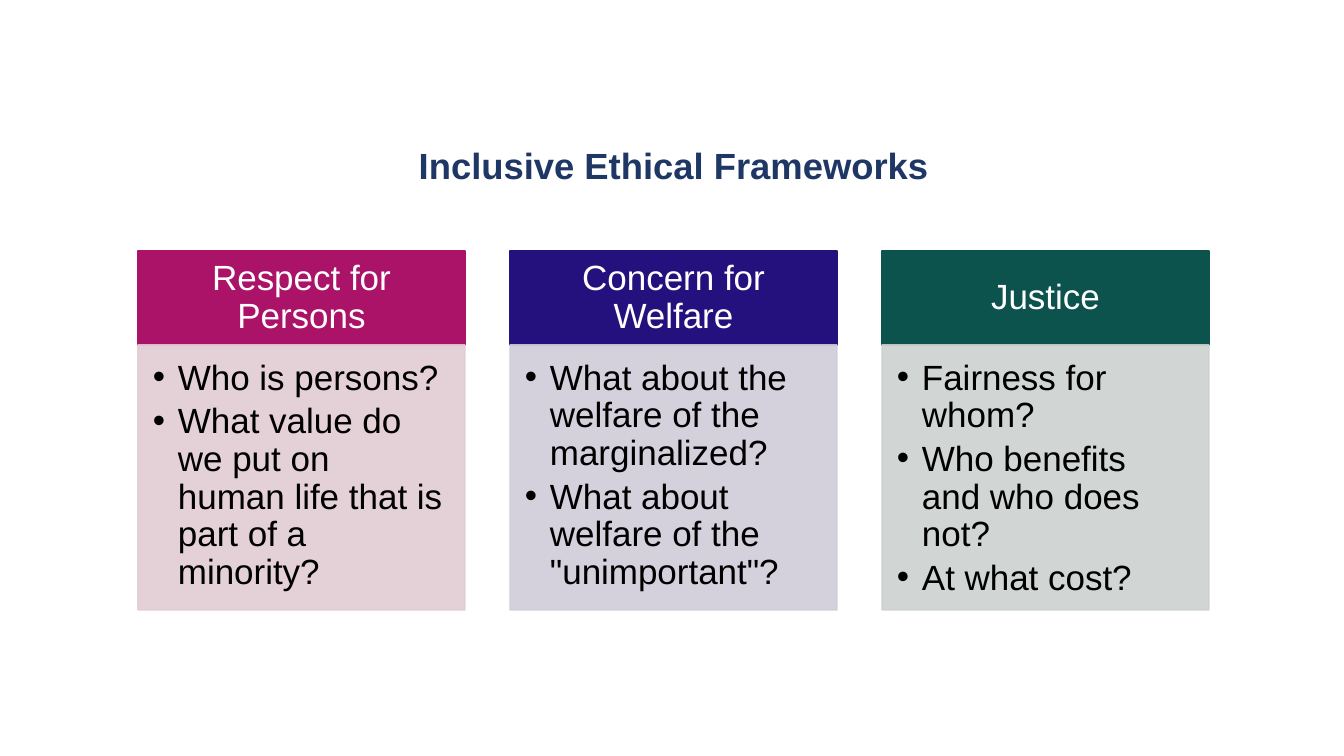
from lxml import etree
from pptx import Presentation
from pptx import util as u
from pptx.dml.color import RGBColor
from pptx.enum import shapes, text
from pptx.oxml.ns import qn

SCALE = 914400 / 100.8
FONT = "Arial"
HUES = {
    "title": "1E3765", "white": "FFFFFF", "black": "000000",
    "rose": "AB1368", "blush": "E2CCD4",
    "indigo": "24117E", "lilac": "D0CCDA",
    "teal": "0D534D", "mist": "CCD1D0",
}
LEFT, STEP, WIDTH = 138, 372, 327
TOP, HEAD, BODY = 251, 94, 265
COLUMNS = [
    ("Respect for Persons", "rose", "blush", [
        "Who is persons?",
        "What value do we put on human life that is part of a minority?"]),
    ("Concern for Welfare", "indigo", "lilac", [
        "What about the welfare of the marginalized?",
        'What about welfare of the "unimportant"?']),
    ("Justice", "teal", "mist", [
        "Fairness for whom?",
        "Who benefits and who does not?",
        "At what cost?"]),
]


def px(n):
    return u.Emu(round(n * SCALE))


def tint(hue):
    return RGBColor.from_string(HUES[hue])


def write(para, words, size, hue, bold=False):
    para.line_spacing = 0.9
    run = para.add_run()
    run.text = words
    font = run.font
    font.name, font.size, font.bold = FONT, u.Pt(size), bold
    font.color.rgb = tint(hue)


def bullet(para):
    props = para._p.get_or_add_pPr()
    props.set("marL", str(px(25)))
    props.set("indent", str(-px(25)))
    etree.SubElement(props, qn("a:buFont")).set("typeface", FONT)
    etree.SubElement(props, qn("a:buChar")).set("char", "•")


def fade(shape, share):
    """Make fill and line opaque to the given percentage."""
    for hue in shape._element.spPr.iter(qn("a:srgbClr")):
        etree.SubElement(hue, qn("a:alpha")).set("val", str(share * 1000))


def box(slide, place, hue, insets, anchor):
    shape = slide.shapes.add_shape(
        shapes.MSO_SHAPE.RECTANGLE, *map(px, place))
    shape.shadow.inherit = False
    shape.fill.solid()
    shape.fill.fore_color.rgb = tint(hue)
    shape.line.color.rgb = tint(hue)
    shape.line.width = u.Pt(1)
    frame = shape.text_frame
    frame.word_wrap = True
    frame.vertical_anchor = anchor
    (frame.margin_left, frame.margin_top,
     frame.margin_right, frame.margin_bottom) = map(px, insets)
    return shape


def header(slide, left, words, hue):
    shape = box(slide, (left, TOP, WIDTH, HEAD), hue,
                (19, 11, 19, 11), text.MSO_ANCHOR.MIDDLE)
    para = shape.text_frame.paragraphs[0]
    para.alignment = text.PP_ALIGN.CENTER
    write(para, words, 25, "white")


def panel(slide, left, items, hue):
    shape = box(slide, (left, TOP + HEAD, WIDTH, BODY), hue,
                (15, 15, 19, 22), text.MSO_ANCHOR.TOP)
    fade(shape, 90)
    frame = shape.text_frame
    for i, item in enumerate(items):
        para = frame.add_paragraph() if i else frame.paragraphs[0]
        bullet(para)
        para.alignment = text.PP_ALIGN.LEFT
        para.space_after = u.Pt(4)
        write(para, item, 25, "black")


def title(slide, words):
    shape = slide.shapes.title
    shape.left, shape.top, shape.width, shape.height = map(
        px, (151, 118, 1046, 99))
    frame = shape.text_frame
    frame.auto_size = text.MSO_AUTO_SIZE.NONE
    frame.vertical_anchor = text.MSO_ANCHOR.MIDDLE
    para = frame.paragraphs[0]
    para.alignment = text.PP_ALIGN.CENTER
    write(para, words, 26, "title", True)


def main():
    deck = Presentation()
    deck.slide_width, deck.slide_height = px(1344), px(756)
    slide = deck.slides.add_slide(deck.slide_layouts[5])
    title(slide, "Inclusive Ethical Frameworks")
    for i, (name, dark, pale, items) in enumerate(COLUMNS):
        left = LEFT + i * STEP
        header(slide, left, name, dark)
        panel(slide, left, items, pale)
    deck.save("out.pptx")


if __name__ == "__main__":
    main()
